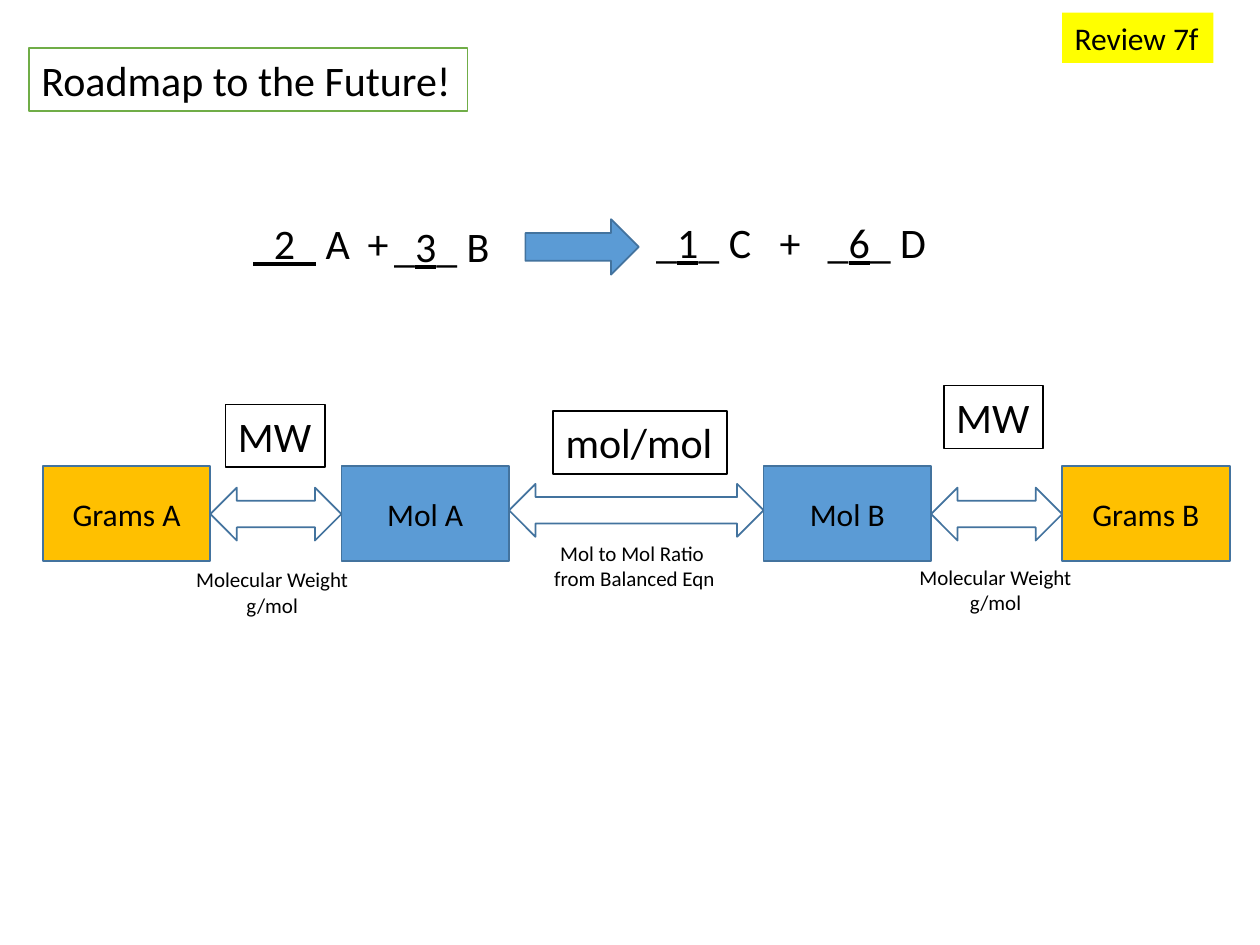
"""Build a stoichiometry roadmap slide from grams of A to grams of B."""
from pptx import Presentation
from pptx import util as u
from pptx.dml.color import RGBColor
from pptx.enum import shapes, text

COLORS = {"blue": "5B9BD5", "outline": "43739E", "gold": "FFC000", "green": "70AD47",
          "yellow": "FFFF00", "white": "FFFFFF", "black": "000000"}
FONT = "Calibri"
BOX_TOP, BOX_WIDTH, BOX_HEIGHT = 3.7, 1.33, 0.75
ARROW_HEIGHT = 0.42
LABEL_HEIGHT = 0.5

STAGES = [("Grams A", 0.34, "gold"), ("Mol A", 2.71, "blue"),
          ("Mol B", 6.06, "blue"), ("Grams B", 8.43, "gold")]
ARROW_TOPS = [3.87, 3.84, 3.87]
CAPTIONS = [("Molecular Weight\ng/mol", 1.45, 4.45, 1.42),
            ("Mol to Mol Ratio \nfrom Balanced Eqn", 4.29, 4.24, 1.49),
            ("Molecular Weight\ng/mol", 7.19, 4.43, 1.42)]
FRAMED_LABELS = [("MW", 1.79, 3.21, 0.79, LABEL_HEIGHT, 24, "white", "black"),
                 ("MW", 7.49, 3.06, 0.79, LABEL_HEIGHT, 24, "white", "black"),
                 ("mol/mol", 4.39, 3.26, 1.38, LABEL_HEIGHT, 24, "white", "black"),
                 ("Roadmap to the Future!", 0.23, 0.38, 3.48, LABEL_HEIGHT, 24, "white", "green"),
                 ("Review 7f", 8.43, 0.1, 1.2, 0.4, 18, "yellow", None)]
EQUATION = [([("_2_", True), (" A", False)], 1.91, 1.68, 0.98),
            ([("+", False)], 2.82, 1.68, 0.37),
            ([("_", False), ("3", True), ("_ B", False)], 3.03, 1.7, 0.97),
            ([("_", False), ("1", True), ("_ C", False)], 5.11, 1.67, 0.96),
            ([("+", False)], 6.09, 1.67, 0.37),
            ([("_", False), ("6", True), ("_ D", False)], 6.47, 1.67, 0.99)]
REACTION_ARROW = (4.17, 1.74, 0.9, 0.44)


def color(name):
    return RGBColor.from_string(COLORS[name])


def add_shape(slide, kind, bounds, fill=None, line="outline"):
    shape = slide.shapes.add_shape(kind, *map(u.Inches, bounds))
    shape.shadow.inherit = False
    if fill:
        shape.fill.solid()
        shape.fill.fore_color.rgb = color(fill)
    else:
        shape.fill.background()
    if line:
        shape.line.color.rgb = color(line)
        shape.line.width = u.Pt(1)
    else:
        shape.line.fill.background()
    return shape


def format_text(shape, size, alignment, wrap=False, anchor=text.MSO_ANCHOR.TOP):
    frame = shape.text_frame
    frame.word_wrap = wrap
    frame.vertical_anchor = anchor
    for paragraph in frame.paragraphs:
        paragraph.alignment = alignment
        for run in paragraph.runs:
            run.font.name = FONT
            run.font.size = u.Pt(size)
            run.font.color.rgb = color("black")


def add_roadmap(slide):
    for name, left, fill in STAGES:
        box = add_shape(slide, shapes.MSO_SHAPE.RECTANGLE,
                        (left, BOX_TOP, BOX_WIDTH, BOX_HEIGHT), fill)
        box.text_frame.text = name
        format_text(box, 18, text.PP_ALIGN.CENTER, True, text.MSO_ANCHOR.MIDDLE)
    for before, after, top in zip(STAGES, STAGES[1:], ARROW_TOPS):
        start = before[1] + BOX_WIDTH
        add_shape(slide, shapes.MSO_SHAPE.LEFT_RIGHT_ARROW,
                  (start, top, after[1] - start, ARROW_HEIGHT))
    for caption, left, top, width in CAPTIONS:
        box = slide.shapes.add_textbox(*map(u.Inches, (left, top, width, LABEL_HEIGHT)))
        box.text_frame.text = caption
        format_text(box, 12, text.PP_ALIGN.CENTER)


def add_framed_labels(slide):
    for label, left, top, width, height, size, fill, line in FRAMED_LABELS:
        box = add_shape(slide, shapes.MSO_SHAPE.RECTANGLE,
                        (left, top, width, height), fill, line)
        box.text_frame.text = label
        format_text(box, size, text.PP_ALIGN.LEFT)


def add_equation(slide):
    add_shape(slide, shapes.MSO_SHAPE.RIGHT_ARROW, REACTION_ARROW, "blue")
    for pieces, left, top, width in EQUATION:
        box = slide.shapes.add_textbox(*map(u.Inches, (left, top, width, LABEL_HEIGHT)))
        for piece, underlined in pieces:
            run = box.text_frame.paragraphs[0].add_run()
            run.text = piece
            run.font.underline = underlined
        format_text(box, 24, text.PP_ALIGN.LEFT)


def main():
    presentation = Presentation()
    presentation.slide_width = u.Inches(10)
    presentation.slide_height = u.Inches(7.5)
    slide = presentation.slides.add_slide(presentation.slide_layouts[6])
    add_roadmap(slide)
    add_framed_labels(slide)
    add_equation(slide)
    presentation.save("out.pptx")


if __name__ == "__main__":
    main()
